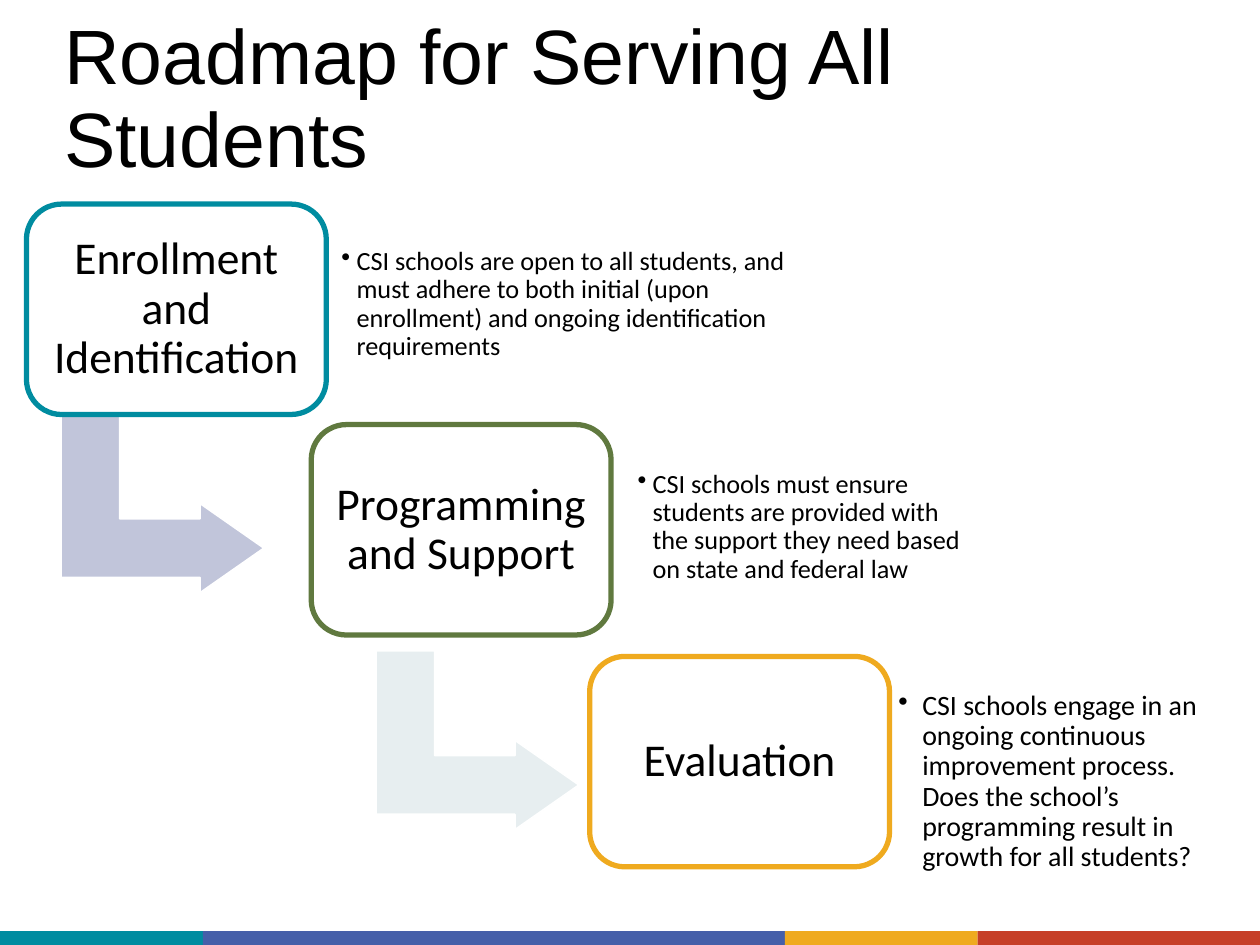
from dataclasses import dataclass

from lxml import etree
from pptx import Presentation
from pptx.dml.color import RGBColor
from pptx.enum.shapes import MSO_SHAPE
from pptx.enum.text import MSO_ANCHOR, MSO_AUTO_SIZE, PP_ALIGN
from pptx.oxml.ns import qn
from pptx.util import Inches, Pt

RECT = MSO_SHAPE.RECTANGLE
ROUND = MSO_SHAPE.ROUNDED_RECTANGLE
BENT = MSO_SHAPE.BENT_UP_ARROW
MIDDLE = MSO_ANCHOR.MIDDLE
FIXED = MSO_AUTO_SIZE.NONE
LEFT, CENTER = PP_ALIGN.LEFT, PP_ALIGN.CENTER


@dataclass(frozen=True)
class Theme:
    ink: str = "000000"
    white: str = "FFFFFF"
    teal: str = "008CA0"
    blue: str = "455FA9"
    gold: str = "EFAA1F"
    red: str = "C63F28"
    green: str = "60793F"
    lilac: str = "C1C5DA"
    mist: str = "E7EEF0"
    head: str = "Arial"
    body: str = "Calibri"
    title: int = 44
    label: int = 26
    note: int = 15
    last: int = 16


THEME = Theme()
CARD = (2.38, 1.67)
ARROW = (1.42, 1.61)
PAD = 0.08

# left, top, width, colour
BARS = [
    (0, 7.39, 1.61, THEME.teal),
    (1.61, 7.39, 4.62, THEME.blue),
    (6.23, 7.39, 1.53, THEME.gold),
    (7.76, 7.39, 2.24, THEME.red),
]

# left, top of each arrow, colour
ARROWS = [(0.58, 3.19, THEME.lilac), (3.08, 5.07, THEME.mist)]

# card place, colour, label, note box, note size, inset, indent, note
STEPS = [
    ((0.21, 1.62), THEME.teal, "Enrollment and Identification",
     (2.63, 1.74, 3.92, 1.35), THEME.note, 0.08, 0.12,
     "CSI schools are open to all students, and must adhere to both initial "
     "(upon enrollment) and ongoing identification requirements"),
    ((2.47, 3.37), THEME.green, "Programming and Support",
     (4.98, 3.51, 2.81, 1.35), THEME.note, 0.08, 0.12,
     "CSI schools must ensure students are provided with the support they "
     "need based on state and federal law"),
    ((4.68, 5.21), THEME.gold, "Evaluation",
     (7.04, 5.38, 2.84, 1.65), THEME.last, 0.09, 0.19,
     "CSI schools engage in an ongoing continuous improvement process. Does "
     "the school’s programming result in growth for all students?"),
]


def rgb(code):
    return RGBColor.from_string(code)


def apply(item, values):
    for name, value in values.items():
        setattr(item, name, value)


def add_form(slide, kind, box, fill=None, line=None, width=1):
    form = slide.shapes.add_shape(kind, *map(Inches, box))
    form.shadow.inherit = False
    if fill:
        form.fill.solid()
        form.fill.fore_color.rgb = rgb(fill)
    else:
        form.fill.background()
    if line:
        form.line.color.rgb = rgb(line)
        form.line.width = Pt(width)
    else:
        form.line.fill.background()
    return form


def write(frame, text, size, face, align, inset=None):
    """Fill a text frame with one paragraph and return it."""
    apply(frame, {"word_wrap": True, "auto_size": FIXED,
                  "vertical_anchor": MIDDLE})
    if inset is not None:
        sides = ("left", "right", "top", "bottom")
        apply(frame, {f"margin_{side}": Inches(inset) for side in sides})
    para = frame.paragraphs[0]
    apply(para, {"alignment": align, "line_spacing": 0.9})
    run = para.add_run()
    run.text = text
    apply(run.font, {"size": Pt(size), "name": face})
    run.font.color.rgb = rgb(THEME.ink)
    return para


def add_text(slide, box, *style):
    frame = slide.shapes.add_textbox(*map(Inches, box)).text_frame
    return write(frame, *style)


def add_bullet(para, indent):
    para.level = 1
    props = para._p.get_or_add_pPr()
    props.set("marL", str(Inches(indent)))
    props.set("indent", str(-Inches(indent)))
    etree.SubElement(props, qn("a:buChar")).set("char", "•")


def add_title(slide, text):
    title = slide.shapes.title
    apply(title, {"left": Inches(0.41), "top": Inches(0.08),
                  "width": Inches(8.62), "height": Inches(1.45)})
    write(title.text_frame, text, THEME.title, THEME.head, LEFT)


def add_arrow(slide, left, top, fill):
    arrow = add_form(slide, BENT, (left, top, *ARROW), fill, THEME.white)
    arrow.rotation = 90
    for i, value in enumerate((0.328, 0.25, 0.358)):
        arrow.adjustments[i] = value


def add_step(slide, place, hue, label, box, size, inset, indent, note):
    left, top = place
    wide, high = CARD
    add_form(slide, ROUND, (left, top, wide, high), line=hue, width=3)
    inner = (left + PAD, top + PAD, wide - 2 * PAD, high - 2 * PAD)
    add_text(slide, inner, label, THEME.label, THEME.body, CENTER, 0.11)
    para = add_text(slide, box, note, size, THEME.body, LEFT, inset)
    add_bullet(para, indent)


def main():
    deck = Presentation()
    deck.slide_width, deck.slide_height = Inches(10), Inches(7.5)
    slide = deck.slides.add_slide(deck.slide_layouts[5])
    for left, top, wide, fill in BARS:
        add_form(slide, RECT, (left, top, wide, 0.11), fill)
    add_title(slide, "Roadmap for Serving All Students")
    for arrow in ARROWS:
        add_arrow(slide, *arrow)
    for step in STEPS:
        add_step(slide, *step)
    deck.save("out.pptx")


if __name__ == "__main__":
    main()
